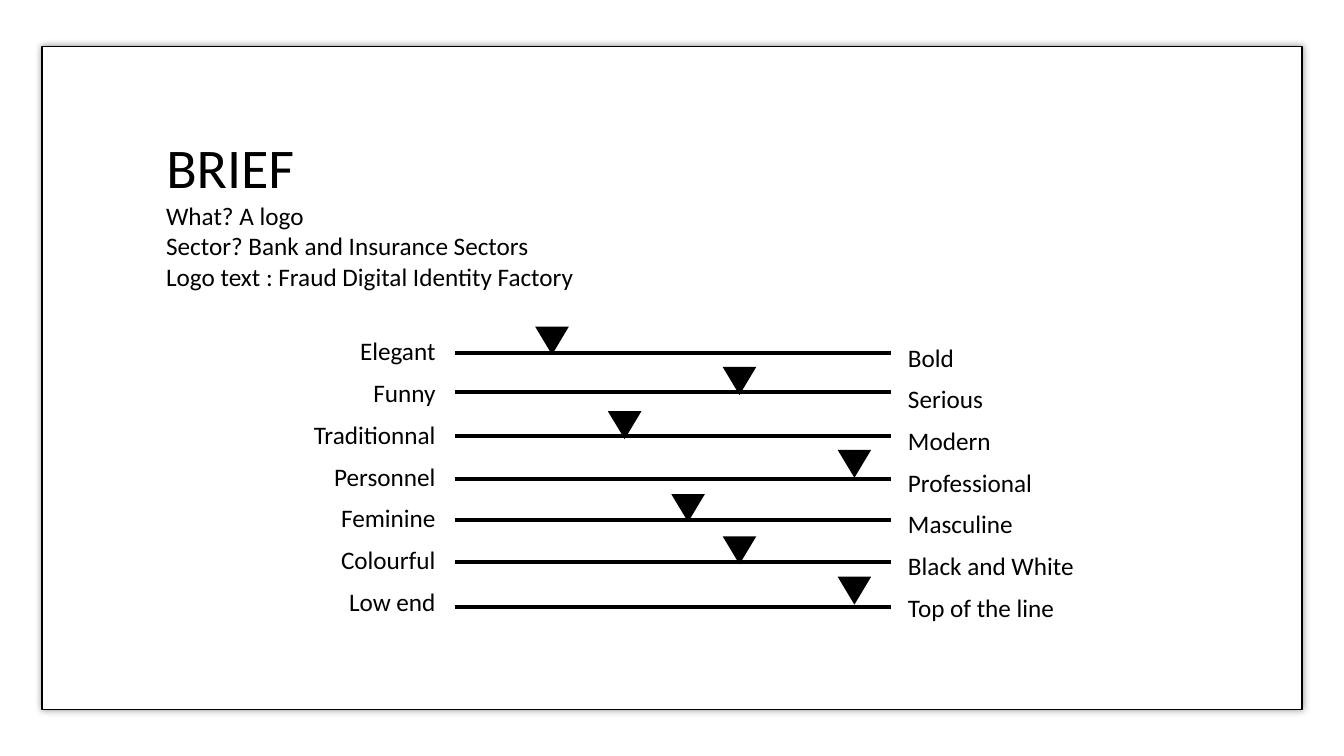
from collections import namedtuple
from dataclasses import dataclass

from lxml import etree
from pptx import Presentation
from pptx.dml.color import RGBColor
from pptx.enum import shapes, text
from pptx.oxml import ns
from pptx.util import Pt

Box = namedtuple("Box", "left top width height")
# line_y and marker_x, marker_y are points from the top left of the scales box
Scale = namedtuple("Scale", "low high line_y marker_x marker_y")


@dataclass(frozen=True)
class Theme:
    ink: RGBColor = RGBColor(0, 0, 0)
    paper: RGBColor = RGBColor(255, 255, 255)
    font: str = "Calibri"
    title_size: float = 40
    body_size: float = 18
    label_pitch: float = 29.8
    frame_line: float = 1
    scale_line: float = 3
    shadow_blur: float = 5
    shadow_opacity: int = 40


THEME = Theme()
MARKER_WIDTH, MARKER_HEIGHT = 24, 20

DETAILS = [
    "What? A logo",
    "Sector? Bank and Insurance Sectors",
    "Logo text : Fraud Digital Identity Factory",
]
SCALES = [
    Scale("Elegant", "Bold", 24, 57.6, 5.3),
    Scale("Funny", "Serious", 52, 191.5, 34),
    Scale("Traditionnal", "Modern", 83.2, 109.5, 65.6),
    Scale("Personnel", "Professional", 113.8, 273.6, 93.2),
    Scale("Feminine", "Masculine", 143.5, 154.8, 124.8),
    Scale("Colourful", "Black and White", 173.6, 191.5, 155),
    Scale("Low end", "Top of the line", 205.5, 273.6, 183.8),
]


def points(box):
    return [Pt(length) for length in box]


def write_lines(text_frame, lines, size, alignment=text.PP_ALIGN.LEFT, spacing=None):
    text_frame.word_wrap = True
    text_frame.vertical_anchor = text.MSO_ANCHOR.TOP
    text_frame.text = "\n".join(lines)
    for paragraph in text_frame.paragraphs:
        paragraph.alignment = alignment
        if spacing:
            paragraph.line_spacing = Pt(spacing)
        for run in paragraph.runs:
            run.font.name = THEME.font
            run.font.size = Pt(size)
            run.font.color.rgb = THEME.ink


def add_text(slide, box, lines, **formatting):
    text_frame = slide.shapes.add_textbox(*points(box)).text_frame
    write_lines(text_frame, lines, THEME.body_size, **formatting)
    text_frame.auto_size = text.MSO_AUTO_SIZE.SHAPE_TO_FIT_TEXT


def add_frame(slide, box):
    """Add the white sheet with a thin outline and a soft glow-like shadow."""
    frame = slide.shapes.add_shape(shapes.MSO_SHAPE.RECTANGLE, *points(box))
    frame.fill.solid()
    frame.fill.fore_color.rgb = THEME.paper
    frame.line.color.rgb = THEME.ink
    frame.line.width = Pt(THEME.frame_line)
    frame.shadow.inherit = False
    effects = frame.element.spPr.find(ns.qn("a:effectLst"))
    shadow = etree.SubElement(
        effects, ns.qn("a:outerShdw"), blurRad=str(Pt(THEME.shadow_blur)),
        dist="0", dir="0", algn="ctr", rotWithShape="0")
    color = etree.SubElement(shadow, ns.qn("a:srgbClr"), val=str(THEME.ink))
    etree.SubElement(color, ns.qn("a:alpha"), val=str(THEME.shadow_opacity * 1000))


def add_heading(slide, box):
    title_height = 52
    title = slide.shapes.title
    title.left, title.top, title.width, title.height = points(
        box._replace(height=title_height))
    write_lines(title.text_frame, ["BRIEF"], THEME.title_size)
    title.text_frame.auto_size = text.MSO_AUTO_SIZE.NONE
    # Bring the title in front of the frame
    title.element.getparent().append(title.element)
    details_top = title_height - 3
    add_text(slide, Box(box.left, box.top + details_top, box.width,
                        box.height - details_top), DETAILS)


def add_marker(slide, left, top):
    marker = slide.shapes.add_shape(
        shapes.MSO_SHAPE.ISOSCELES_TRIANGLE,
        *points(Box(left, top, MARKER_WIDTH, MARKER_HEIGHT)))
    marker.rotation = 180
    marker.fill.solid()
    marker.fill.fore_color.rgb = THEME.ink
    marker.line.fill.background()
    marker.shadow.inherit = False


def add_scale_line(slide, left, right, y):
    line = slide.shapes.add_connector(
        shapes.MSO_CONNECTOR.STRAIGHT, Pt(left), Pt(y), Pt(right), Pt(y))
    line.line.color.rgb = THEME.ink
    line.line.width = Pt(THEME.scale_line)
    etree.SubElement(line.element.spPr, ns.qn("a:effectLst"))


def add_scales(slide, box):
    """Add the scales across the box, with their end labels on either side."""
    label_width = 230.4
    right = box.left + box.width
    for scale in SCALES:
        add_marker(slide, box.left + scale.marker_x, box.top + scale.marker_y)
    add_text(slide, Box(box.left - 6.5 - label_width, box.top, label_width, box.height),
             [scale.low for scale in SCALES],
             alignment=text.PP_ALIGN.RIGHT, spacing=THEME.label_pitch)
    add_text(slide, Box(right + 5, box.top + 4.4, label_width, box.height),
             [scale.high for scale in SCALES], spacing=THEME.label_pitch)
    for scale in SCALES:
        add_scale_line(slide, box.left, right, box.top + scale.line_y)


def main():
    presentation = Presentation()
    presentation.slide_width, presentation.slide_height = Pt(960), Pt(540)
    slide = presentation.slides.add_slide(
        presentation.slide_layouts.get_by_name("Title Only"))
    add_frame(slide, Box(30, 33.1, 900, 473.8))
    add_scales(slide, Box(324.7, 228.1, 311.8, 216.7))
    add_heading(slide, Box(111.6, 90.7, 736.6, 121))
    presentation.save("out.pptx")


if __name__ == "__main__":
    main()
